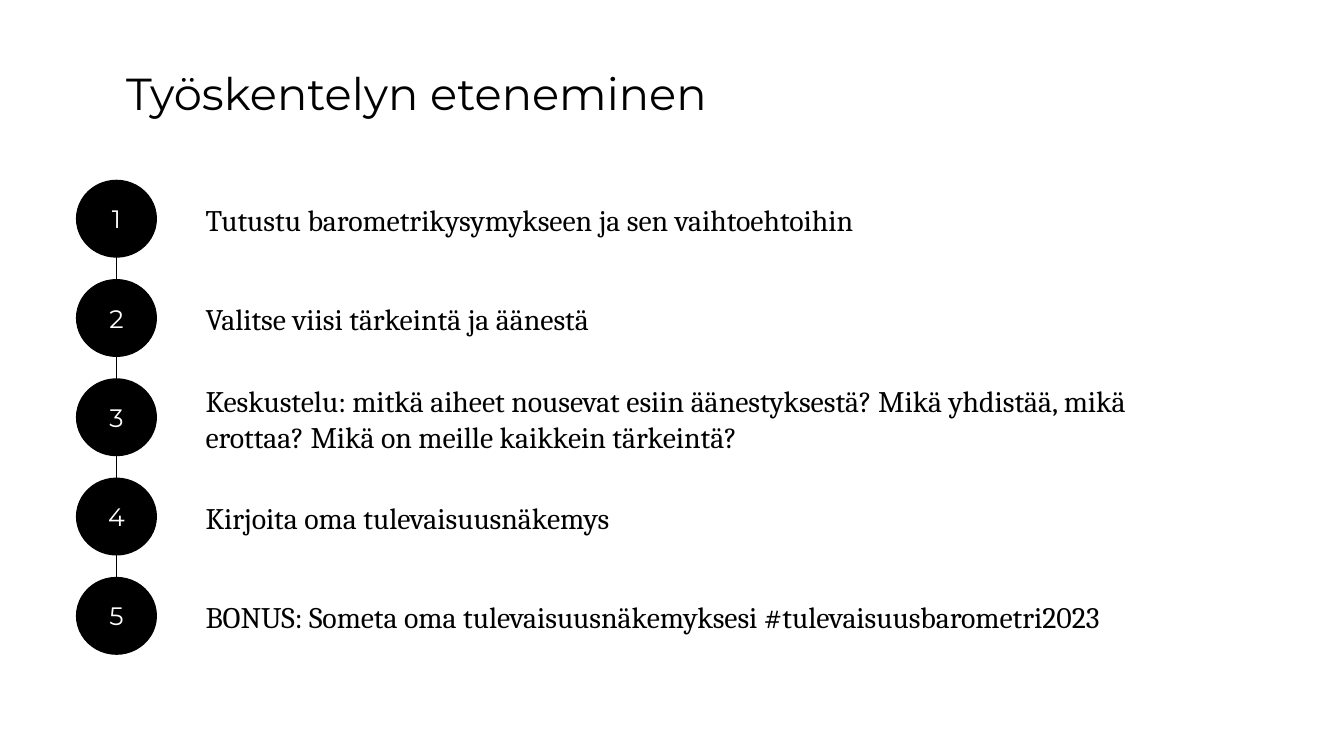
from pptx import Presentation
from pptx.dml.color import RGBColor
from pptx.enum.shapes import MSO_CONNECTOR, MSO_SHAPE
from pptx.enum.text import MSO_ANCHOR, MSO_AUTO_SIZE, PP_ALIGN
from pptx.oxml.ns import qn
from pptx.util import Inches, Pt
from lxml.etree import SubElement

BLACK = RGBColor(0, 0, 0)
WHITE = RGBColor(255, 255, 255)

STEPS = [
    "Tutustu barometrikysymykseen ja sen vaihtoehtoihin",
    "Valitse viisi tärkeintä ja äänestä",
    "Keskustelu: mitkä aiheet nousevat esiin äänestyksestä? "
    "Mikä yhdistää, mikä erottaa? Mikä on meille kaikkein tärkeintä?",
    "Kirjoita oma tulevaisuusnäkemys",
    "BONUS: Someta oma tulevaisuusnäkemyksesi #tulevaisuusbarometri2023",
]
LEFT, TOP, WIDE, HIGH = 0.76, 1.79, 0.79, 0.76
PITCH = (5.73 - TOP) / (len(STEPS) - 1)


class Deck:
    head = {"name": "Montserrat", "size": Pt(32)}
    body = {"name": "Cambria", "size": Pt(21.3)}
    mark = {"name": "Montserrat", "size": Pt(18)}

    def __init__(self):
        self.show = Presentation()
        self.show.slide_width = Inches(13.33)
        self.show.slide_height = Inches(7.5)
        self.slide = self.show.slides.add_slide(self.show.slide_layouts[5])

    def label(self, shape, text, style, color, align, anchor):
        frame = shape.text_frame
        frame.text = text
        look = {"word_wrap": True, "auto_size": MSO_AUTO_SIZE.NONE,
                "vertical_anchor": anchor}
        for key, value in look.items():
            setattr(frame, key, value)
        line = frame.paragraphs[0]
        line.alignment = align
        font = line.runs[0].font
        for key, value in style.items():
            setattr(font, key, value)
        font.color.rgb = color

    def title(self, text, *box):
        shape = self.slide.shapes.title
        for key, value in zip(("left", "top", "width", "height"), box):
            setattr(shape, key, Inches(value))
        self.label(shape, text, self.head, BLACK, PP_ALIGN.LEFT, MSO_ANCHOR.TOP)

    def text(self, text, *box):
        shape = self.slide.shapes.add_textbox(*map(Inches, box))
        self.label(shape, text, self.body, BLACK, PP_ALIGN.LEFT, MSO_ANCHOR.MIDDLE)

    def line(self, *ends):
        link = self.slide.shapes.add_connector(
            MSO_CONNECTOR.STRAIGHT, *map(Inches, ends))
        link.line.color.rgb = BLACK
        link.line.width = Pt(1)
        SubElement(link._element.spPr, qn("a:effectLst"))

    def disc(self, text, *box):
        shape = self.slide.shapes.add_shape(MSO_SHAPE.OVAL, *map(Inches, box))
        shape.shadow.inherit = False
        shape.fill.solid()
        shape.fill.fore_color.rgb = BLACK
        shape.line.color.rgb = BLACK
        shape.line.width = Pt(1)
        self.label(shape, text, self.mark, WHITE, PP_ALIGN.CENTER, MSO_ANCHOR.MIDDLE)


def main():
    deck = Deck()
    deck.title("Työskentelyn eteneminen", 1.15, 0.6, 11.02, 1.18)
    rows = [TOP + PITCH * step for step in range(len(STEPS))]
    axis = LEFT + WIDE / 2
    deck.line(axis, rows[0] + HIGH / 2, axis, rows[-1] + HIGH / 2)
    for count, (top, step) in enumerate(zip(rows, STEPS), 1):
        deck.text(step, 1.94, top - 0.03, 10.24, 0.84)
        deck.disc(str(count), LEFT, top, WIDE, HIGH)
    deck.show.save("out.pptx")


if __name__ == "__main__":
    main()
